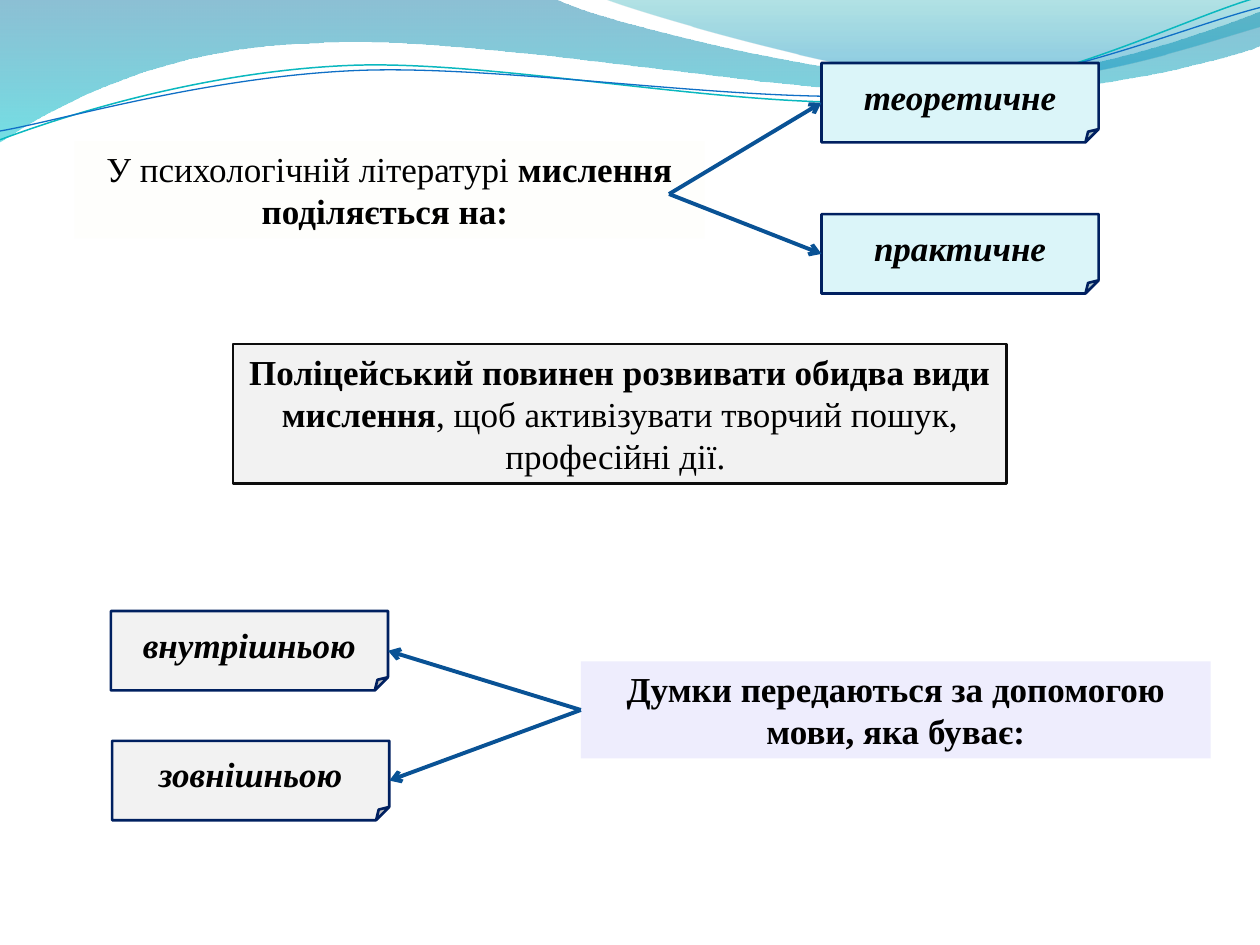
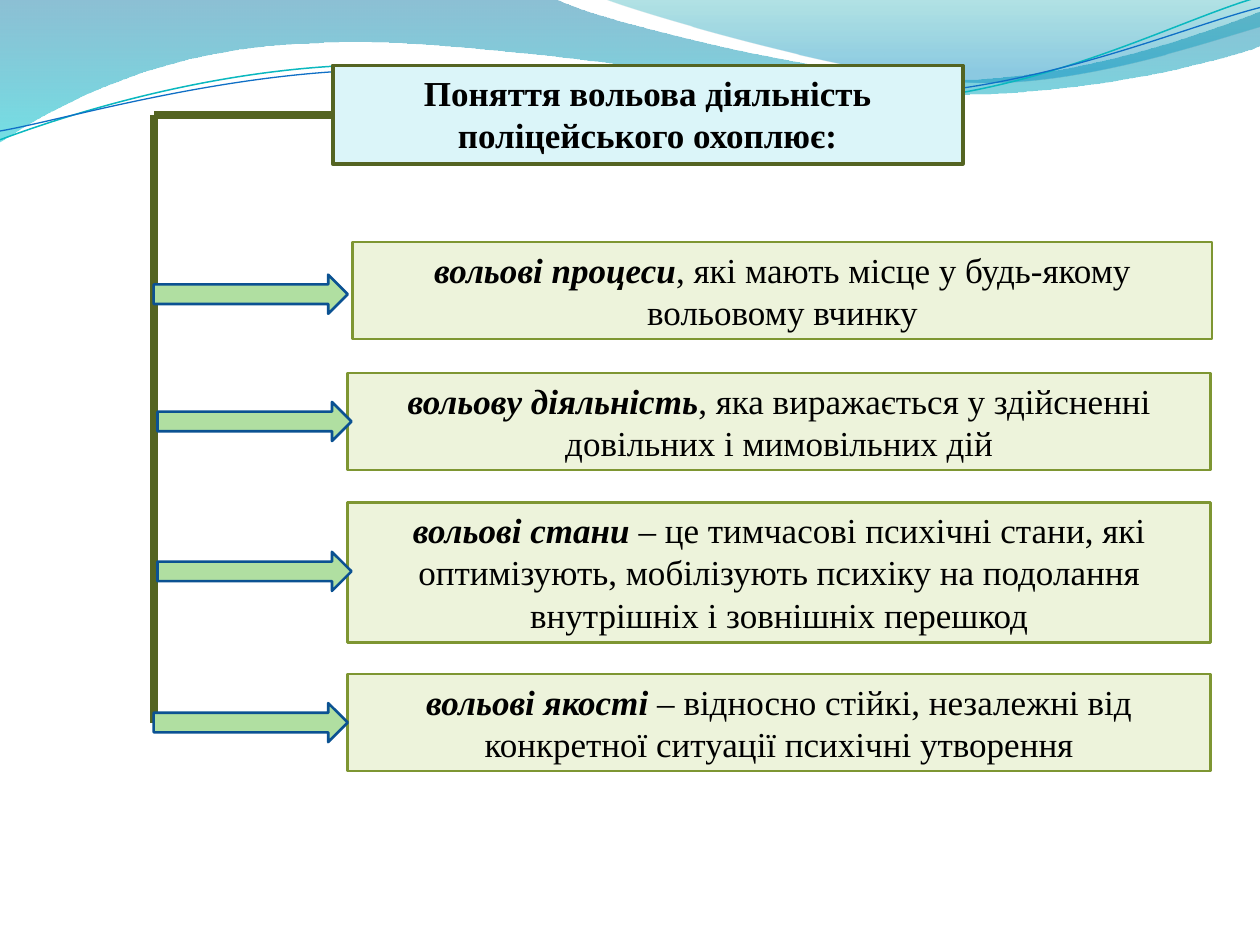
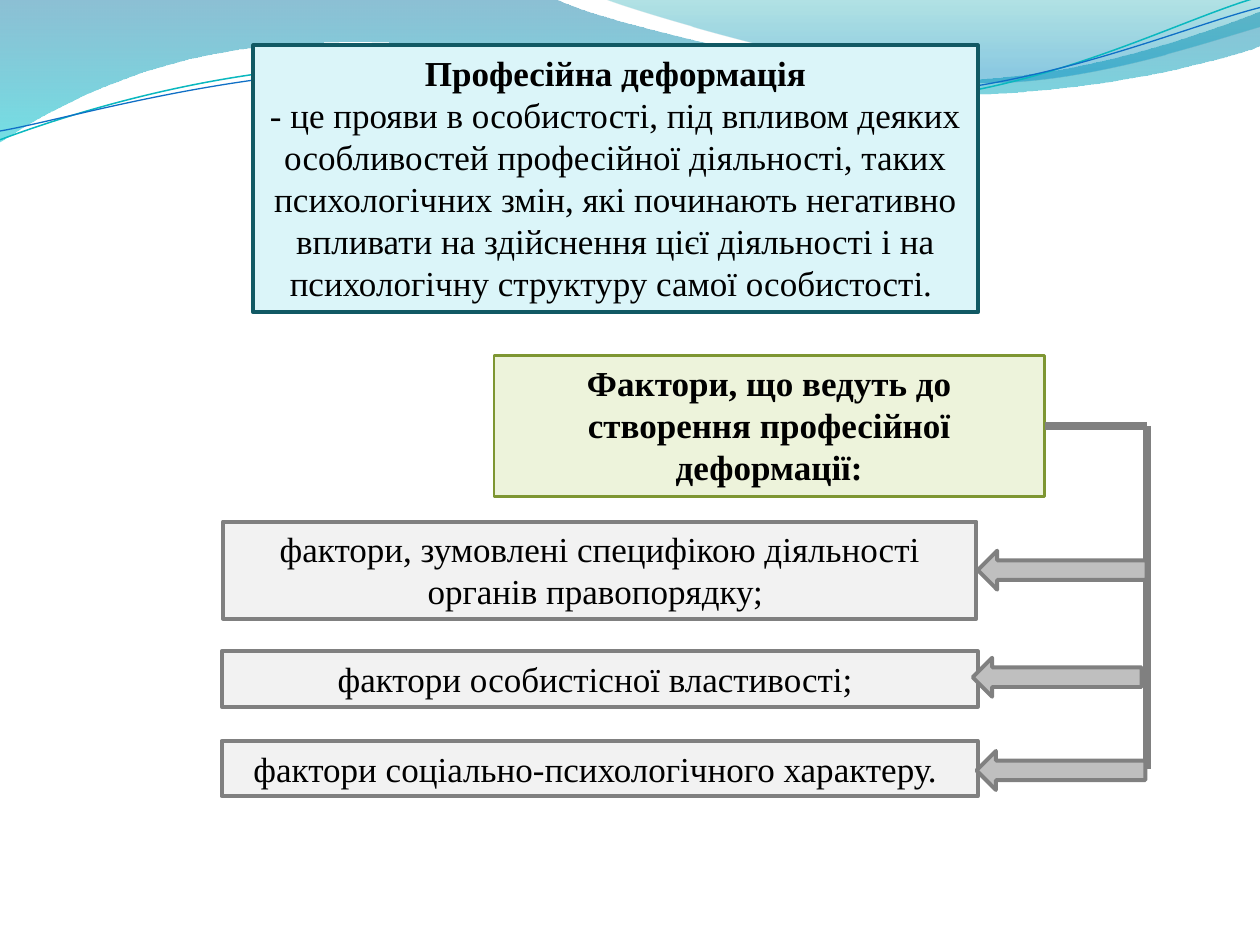
"""Build three slides on thinking, will and professional deformation."""
from dataclasses import dataclass

from lxml import etree
from pptx import Presentation
from pptx import util as u
from pptx.dml.color import RGBColor
from pptx.enum import shapes, text
from pptx.oxml import ns


@dataclass(frozen=True)
class Theme:
    """Colours, font and sizes shared by all slides."""
    font: str = "Times New Roman"
    size: u.Pt = u.Pt(20)
    thin: float = 1.5
    medium: float = 2.25
    thick: float = 4.5
    ink: RGBColor = RGBColor(0x00, 0x00, 0x00)
    frame: RGBColor = RGBColor(0x0D, 0x0D, 0x0D)
    navy: RGBColor = RGBColor(0x00, 0x20, 0x60)
    blue: RGBColor = RGBColor(0x09, 0x52, 0x95)
    arrow_blue: RGBColor = RGBColor(0x0B, 0x52, 0x92)
    teal: RGBColor = RGBColor(0x11, 0x59, 0x64)
    aqua: RGBColor = RGBColor(0xDB, 0xF5, 0xF9)
    olive: RGBColor = RGBColor(0x54, 0x64, 0x22)
    moss: RGBColor = RGBColor(0x7E, 0x96, 0x32)
    lime: RGBColor = RGBColor(0xED, 0xF3, 0xDB)
    green: RGBColor = RGBColor(0xB0, 0xDF, 0xA1)
    cream: RGBColor = RGBColor(0xFE, 0xFE, 0xFC)
    lilac: RGBColor = RGBColor(0xEE, 0xED, 0xFD)
    pale: RGBColor = RGBColor(0xF2, 0xF2, 0xF2)
    silver: RGBColor = RGBColor(0xBF, 0xBF, 0xBF)
    grey: RGBColor = RGBColor(0x80, 0x80, 0x80)
    wave_cyan: RGBColor = RGBColor(0x0A, 0xB8, 0xBF)
    wave_blue: RGBColor = RGBColor(0x0F, 0x6F, 0xC6)
    band_left: tuple = ((0, RGBColor(0x00, 0x74, 0xA1), 45),
                        (1, RGBColor(0x00, 0xC6, 0xCF), 55))
    band_right: tuple = ((0, RGBColor(0x00, 0xA1, 0xA9), 30),
                         (0.8, RGBColor(0x00, 0x8B, 0xBF), 45))


THEME = Theme()
KIND = shapes.MSO_SHAPE


@dataclass(frozen=True)
class Span:
    """A run of text in one style."""
    text: str
    bold: bool = False
    italic: bool = False


@dataclass(frozen=True)
class Style:
    """Fill and outline of a shape."""
    fill: RGBColor
    line: RGBColor | None = None
    weight: float = THEME.thin


@dataclass(frozen=True)
class Box:
    """A shape with its place in inches, its style and its paragraphs."""
    place: tuple
    style: Style
    paras: tuple = ()
    kind: KIND = KIND.RECTANGLE
    anchor: text.MSO_ANCHOR = text.MSO_ANCHOR.TOP


@dataclass(frozen=True)
class Wave:
    """A decorative outline: line steps hold 2 numbers, curve steps hold 6."""
    start: tuple
    steps: tuple
    stops: tuple = ()
    line: RGBColor | None = None
    weight: float = 0


WAVES = (
    Wave((0, 0), ((4.4, -0.01), (4.76, 0.17, 6.64, 0.63, 7.58, 0.63),
                  (8.53, 0.63, 9.58, 0.26, 10, 0.09), (10.01, 0.36),
                  (9.83, 0.44, 8.7, 0.76, 7.46, 0.75),
                  (6.22, 0.75, 3.82, 0.28, 2.57, 0.34),
                  (1.29, 0.36, 0.46, 0.83, -0.01, 1.13)), THEME.band_left),
    Wave((4.79, -0.01), ((5.09, 0.11, 6.82, 0.62, 7.69, 0.65),
                         (8.56, 0.69, 9.61, 0.32, 10, 0.21), (10, 0)),
         THEME.band_right),
    Wave((0, 1.11), ((0.48, 0.93, 1.58, 0.57, 2.77, 0.52),
                     (3.95, 0.47, 5.93, 0.89, 7.13, 0.8),
                     (8.33, 0.71, 9.38, 0.15, 9.98, -0.02)),
         line=THEME.wave_cyan, weight=0.85),
    Wave((0, 1.04), ((0.47, 0.96, 1.64, 0.61, 2.83, 0.56),
                     (4.03, 0.51, 5.97, 0.84, 7.17, 0.75),
                     (8.36, 0.67, 9.41, 0.21, 10, 0.06)),
         line=THEME.wave_blue, weight=0.75),
)


def draw_wave(page, wave: Wave):
    """Build a wave outline and turn its curve steps into Bezier segments."""
    builder = page.shapes.build_freeform(*map(u.Inches, wave.start))
    points = [tuple(map(u.Inches, step[at:at + 2]))
              for step in wave.steps for at in range(0, len(step), 2)]
    builder.add_line_segments(points, close=bool(wave.stops))
    shape = builder.convert_to_shape()
    segments = iter(shape.element.xpath(".//a:path/a:lnTo"))
    for step in wave.steps:
        segment = next(segments)
        if len(step) == 6:
            segment.tag = ns.qn("a:cubicBezTo")
            for extra in (next(segments), next(segments)):
                segment.append(extra[0])
                extra.getparent().remove(extra)
    return shape


def add_waves(deck, page) -> None:
    """Draw the waves and hand them to the slide master."""
    tree = deck.slide_master.element.cSld.spTree
    for index, wave in enumerate(WAVES):
        shape = draw_wave(page, wave)
        shape.shadow.inherit = False
        if wave.stops:
            shape.line.fill.background()
            shape.fill.gradient()
            shape.fill.gradient_angle = 270
            for stop, (position, colour, _) in zip(shape.fill.gradient_stops, wave.stops):
                stop.position, stop.color.rgb = position, colour
            for node, (_, _, opacity) in zip(shape.element.xpath(".//a:gs/a:srgbClr"), wave.stops):
                etree.SubElement(node, ns.qn("a:alpha"), val=str(opacity * 1000))
        else:
            shape.fill.background()
            shape.line.color.rgb, shape.line.width = wave.line, u.Pt(wave.weight)
        shape.element.xpath("./p:nvSpPr/p:cNvPr")[0].set("id", str(100 + index))
        tree.insert(2 + index, shape.element)


def dress(shape, box: Box):
    """Give a shape the style and text of a box."""
    shape.shadow.inherit = False
    shape.fill.solid()
    shape.fill.fore_color.rgb = box.style.fill
    if box.style.line is None:
        shape.line.fill.background()
    else:
        shape.line.color.rgb, shape.line.width = box.style.line, u.Pt(box.style.weight)
    frame = shape.text_frame
    frame.word_wrap, frame.auto_size = True, text.MSO_AUTO_SIZE.NONE
    frame.vertical_anchor = box.anchor
    for index, spans in enumerate(box.paras):
        para = frame.add_paragraph() if index else frame.paragraphs[0]
        para.alignment = text.PP_ALIGN.CENTER
        for span in spans:
            run = para.add_run()
            run.text = span.text
            run.font.name, run.font.size = THEME.font, THEME.size
            run.font.bold, run.font.italic = span.bold, span.italic
            run.font.color.rgb = THEME.ink
    return shape


def add_box(page, box: Box):
    """Add a box to a slide."""
    return dress(page.shapes.add_shape(box.kind, *map(u.Inches, box.place)), box)


def add_title(page, box: Box):
    """Turn the title placeholder into a box."""
    title = page.shapes.title
    title.left, title.top, title.width, title.height = map(u.Inches, box.place)
    return dress(title, box)


def add_line(page, start: tuple, end: tuple, colour: RGBColor, weight: float,
             arrow: bool = False):
    """Add a straight connector, with an arrowhead on request."""
    line = page.shapes.add_connector(shapes.MSO_CONNECTOR.STRAIGHT,
                                     *map(u.Inches, start + end))
    line.line.color.rgb, line.line.width = colour, u.Pt(weight)
    properties = line.element.spPr
    if arrow:
        etree.SubElement(properties.find(ns.qn("a:ln")), ns.qn("a:tailEnd"), type="arrow")
    etree.SubElement(properties, ns.qn("a:effectLst"))
    return line


def add_note(page, word: str, left: float, top: float, fill: RGBColor):
    """Add a folded note with one term."""
    return add_box(page, Box((left, top, 2.2, 0.63), Style(fill, THEME.navy),
                             ((Span(word, True, True),),),
                             KIND.FOLDED_CORNER, text.MSO_ANCHOR.MIDDLE))


def fill_thinking(page) -> None:
    """Fill the slide on kinds of thinking and speech."""
    add_title(page, Box((0.59, 1.12, 5, 0.77), Style(THEME.cream), (
        (Span("У психологічній літературі "), Span("мислення поділяється на: ", True)),)))
    for word, top in (("теоретичне", 0.5), ("практичне", 1.7)):
        note = add_note(page, word, 6.52, top, THEME.aqua)
        line = add_line(page, (5.31, 1.54), (6.52, top + 0.31), THEME.blue, THEME.medium, True)
        line.end_connect(note, 1)
    add_box(page, Box((1.85, 2.73, 6.14, 1.11), Style(THEME.pale, THEME.frame), (
        (Span("Поліцейський повинен розвивати обидва види мислення", True),
         Span(", щоб активізувати творчий пошук, професійні дії. ")),)))
    speech = add_box(page, Box((4.61, 5.25, 5, 0.77), Style(THEME.lilac), (
        (Span("Думки передаються за допомогою мови, яка буває:", True),),)))
    for word, left, top in (("внутрішньою", 0.88, 4.85), ("зовнішньою", 0.89, 5.88)):
        note = add_note(page, word, left, top, THEME.pale)
        line = add_line(page, (4.61, 5.63), (left + 2.2, top + 0.31),
                        THEME.blue, THEME.medium, True)
        line.begin_connect(speech, 1)
        line.end_connect(note, 3)


def fill_will(page) -> None:
    """Fill the slide on volitional activity."""
    title = add_title(page, Box(
        (2.64, 0.52, 5, 0.78), Style(THEME.aqua, THEME.olive, THEME.medium),
        ((Span("Поняття вольова діяльність поліцейського охоплює:", True),),)))
    rows = (
        ((2.8, 1.92, 6.82, 0.77), "вольові процеси",
         ", які мають місце у будь-якому вольовому вчинку"),
        ((2.76, 2.96, 6.85, 0.77), "вольову діяльність",
         ", яка виражається у здійсненні довільних і мимовільних дій"),
        ((2.76, 3.99, 6.85, 1.11), "вольові стани ",
         "– це тимчасові психічні стани, які оптимізують, мобілізують психіку "
         "на подолання внутрішніх і зовнішніх перешкод"),
        ((2.76, 5.35, 6.85, 0.77), "вольові якості ",
         "– відносно стійкі, незалежні від конкретної ситуації психічні утворення"),
    )
    for place, term, meaning in rows:
        add_box(page, Box(place, Style(THEME.lime, THEME.moss),
                          ((Span(term, True, True), Span(meaning)),)))
    branch = add_line(page, (2.64, 0.91), (1.22, 0.91), THEME.olive, THEME.thick)
    branch.begin_connect(title, 1)
    add_line(page, (1.22, 0.91), (1.22, 5.74), THEME.olive, THEME.thick)
    for left, top in ((1.22, 2.18), (1.25, 3.19), (1.25, 4.38), (1.22, 5.58)):
        add_box(page, Box((left, top, 1.54, 0.31), Style(THEME.green, THEME.arrow_blue),
                          kind=KIND.RIGHT_ARROW))


def fill_deformation(page) -> None:
    """Fill the slide on professional deformation."""
    add_title(page, Box(
        (2.01, 0.36, 5.75, 2.12), Style(THEME.aqua, THEME.teal, THEME.medium),
        ((Span("Професійна деформація", True),),
         (Span("- це прояви в особистості, під впливом деяких особливостей професійної "
               "діяльності, таких психологічних змін, які починають негативно впливати "
               "на здійснення цієї діяльності і на психологічну структуру самої "
               "особистості. "),))))
    factors = add_box(page, Box(
        (3.92, 2.82, 4.37, 1.12), Style(THEME.lime, THEME.moss),
        ((Span("Фактори, що ведуть до створення професійної деформації:", True),),)))
    rows = (
        ((1.77, 4.14, 5.98, 0.77), "фактори, зумовлені специфікою діяльності органів правопорядку; "),
        ((1.76, 5.17, 6, 0.44), "фактори особистісної властивості; "),
        ((1.76, 5.88, 6, 0.44), "фактори соціально-психологічного характеру. "),
    )
    for place, factor in rows:
        add_box(page, Box(place, Style(THEME.pale, THEME.grey, THEME.medium),
                          ((Span(factor),),)))
    branch = add_line(page, (8.29, 3.38), (9.1, 3.38), THEME.grey, THEME.thick)
    branch.begin_connect(factors, 3)
    add_line(page, (9.1, 3.38), (9.1, 6.1), THEME.grey, THEME.thick)
    for left, top in ((7.76, 4.37), (7.72, 5.22), (7.75, 5.96)):
        add_box(page, Box((left, top, 1.34, 0.31),
                          Style(THEME.silver, THEME.grey, THEME.medium),
                          kind=KIND.LEFT_ARROW))


def main() -> None:
    """Build and save the deck."""
    deck = Presentation()
    deck.slide_width, deck.slide_height = u.Inches(10), u.Inches(7.5)
    title_only = deck.slide_layouts[5]
    for index, fill_page in enumerate((fill_thinking, fill_will, fill_deformation)):
        page = deck.slides.add_slide(title_only)
        if index == 0:
            add_waves(deck, page)
        fill_page(page)
    deck.save("out.pptx")


if __name__ == "__main__":
    main()
